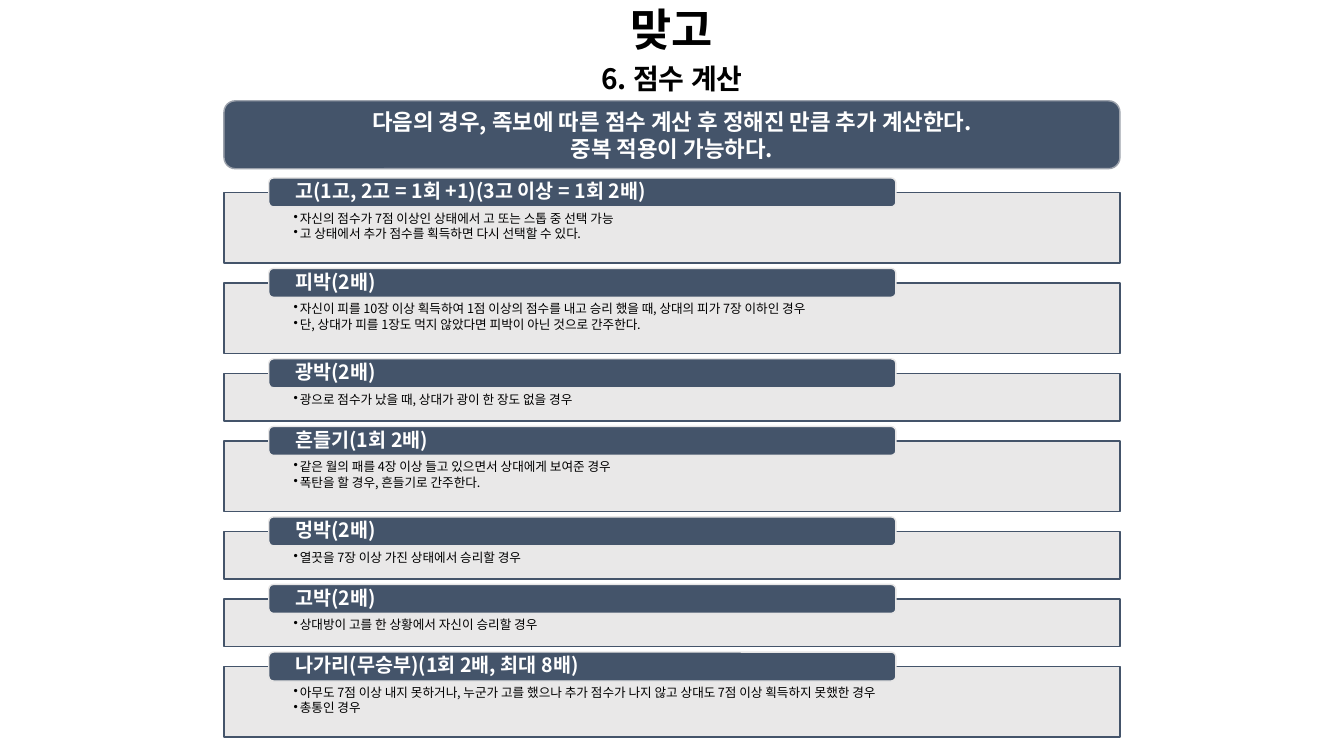
from lxml.etree import SubElement
from pptx import Presentation
from pptx.dml.color import RGBColor
from pptx.enum.shapes import MSO_SHAPE as Shape
from pptx.enum.text import MSO_ANCHOR as Anchor, MSO_AUTO_SIZE as AutoSize, PP_ALIGN as Align
from pptx.oxml.ns import qn
from pptx.util import Pt

RULES = [
    ("고(1고, 2고 = 1회 +1)(3고 이상 = 1회 2배)",
     ["자신의 점수가 7점 이상인 상태에서 고 또는 스톱 중 선택 가능",
      "고 상태에서 추가 점수를 획득하면 다시 선택할 수 있다."]),
    ("피박(2배)",
     ["자신이 피를 10장 이상 획득하여 1점 이상의 점수를 내고 승리 했을 때, 상대의 피가 7장 이하인 경우",
      "단, 상대가 피를 1장도 먹지 않았다면 피박이 아닌 것으로 간주한다."]),
    ("광박(2배)", ["광으로 점수가 났을 때, 상대가 광이 한 장도 없을 경우"]),
    ("흔들기(1회 2배)",
     ["같은 월의 패를 4장 이상 들고 있으면서 상대에게 보여준 경우",
      "폭탄을 할 경우, 흔들기로 간주한다."]),
    ("멍박(2배)", ["열끗을 7장 이상 가진 상태에서 승리할 경우"]),
    ("고박(2배)", ["상대방이 고를 한 상황에서 자신이 승리할 경우"]),
    ("나가리(무승부)(1회 2배, 최대 8배)",
     ["아무도 7점 이상 내지 못하거나, 누군가 고를 했으나 추가 점수가 나지 않고 상대도 7점 이상 획득하지 못했한 경우",
      "총통인 경우"]),
]


def color(value):
    return RGBColor.from_string(value)


class RuleSlide:
    font = "Noto Sans CJK KR"
    navy, gray, edge = "44546A", "E7E6E6", "9CA2AC"
    black, white = "000000", "FFFFFF"
    left, width = 160, 640

    def __init__(self, slide):
        self.slide = slide

    def label(self, owner, lines, size, ink, bold=True, align=Align.CENTER,
              anchor=Anchor.MIDDLE, insets=(7.2, 3.6, 7.2, 3.6), spacing=1, after=0):
        frame = owner.text_frame
        frame.text = "\n".join(lines)
        frame.word_wrap = True
        frame.auto_size = AutoSize.NONE
        frame.vertical_anchor = anchor
        (frame.margin_left, frame.margin_top,
         frame.margin_right, frame.margin_bottom) = map(Pt, insets)
        for paragraph in frame.paragraphs:
            paragraph.alignment = align
            paragraph.line_spacing = spacing
            paragraph.space_before = Pt(0)
            paragraph.space_after = Pt(after)
            for run in paragraph.runs:
                run.font.size = Pt(size)
                run.font.bold = bold
                run.font.color.rgb = color(ink)
                run.font.name = self.font
                SubElement(run.font._element, qn("a:ea"), typeface=self.font)

    def heading(self, index, text, top, height, size):
        heading = self.slide.placeholders[index]
        heading.left, heading.top = Pt(0), Pt(top)
        heading.width, heading.height = Pt(960), Pt(height)
        self.label(heading, [text], size, self.black)

    def box(self, kind, left, top, width, height, fill, line):
        box = self.slide.shapes.add_shape(kind, Pt(left), Pt(top), Pt(width), Pt(height))
        box.shadow.inherit = False
        box.fill.solid()
        box.fill.fore_color.rgb = color(fill)
        box.line.color.rgb = color(line)
        box.line.width = Pt(1)
        return box

    def banner(self, lines, top, height):
        banner = self.box(Shape.ROUNDED_RECTANGLE, self.left, top, self.width, height,
                          self.navy, self.edge)
        self.label(banner, lines, 16, self.white)

    def panel(self, points, top, height):
        panel = self.box(Shape.RECTANGLE, self.left, top, self.width, height,
                         self.gray, self.navy)
        tint = panel.fill._xPr.find(qn("a:solidFill"))[0]
        SubElement(tint, qn("a:alpha"), val="90000")
        self.label(panel, points, 9, self.black, False, Align.LEFT, Anchor.TOP,
                   (49.7, 14.2, 49.7, 5), 0.9, 1.35)
        for paragraph in panel.text_frame.paragraphs:
            properties = paragraph._p.get_or_add_pPr()
            properties.set("marL", str(Pt(4.5)))
            properties.set("indent", str(Pt(-4.5)))
            SubElement(properties, qn("a:buChar"), char="•")

    def tag(self, name, top):
        tag = self.box(Shape.ROUNDED_RECTANGLE, self.left + 32, top, 448, 20.7,
                       self.navy, self.gray)
        self.label(tag, [name], 14, self.white, align=Align.LEFT,
                   insets=(18, 0, 18, 0), spacing=0.9)


def main():
    deck = Presentation()
    deck.slide_width, deck.slide_height = Pt(960), Pt(540)
    page = RuleSlide(deck.slides.add_slide(deck.slide_layouts[0]))
    page.heading(0, "맞고", 0, 41, 32)
    page.heading(1, "6. 점수 계산", 41, 29.5, 20)

    top, gap = 137.5, 14.3
    for name, points in RULES:
        height = 17.7 + 16.3 * len(points)
        page.panel(points, top, height)
        page.tag(name, top - 10.4)
        top += height + gap

    page.banner(["다음의 경우, 족보에 따른 점수 계산 후 정해진 만큼 추가 계산한다.",
                 "중복 적용이 가능하다."], 72, 48.5)
    deck.save("out.pptx")


if __name__ == "__main__":
    main()
